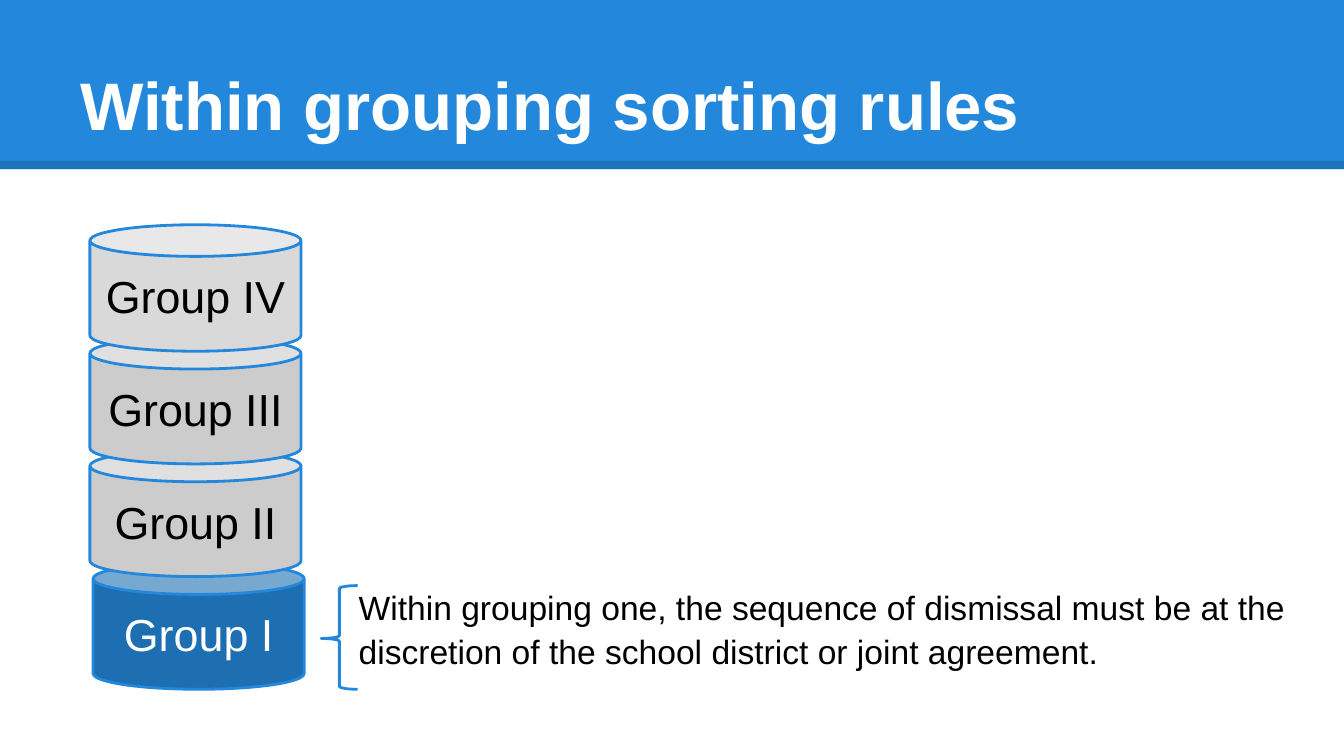
"""Build a slide with a stack of group cylinders and the sorting rule for group one."""
from dataclasses import dataclass

import lxml.etree
import pptx
import pptx.dml.color
import pptx.enum.shapes
import pptx.enum.text
import pptx.oxml
import pptx.oxml.ns
import pptx.util

Cm = pptx.util.Cm
Pt = pptx.util.Pt
RGBColor = pptx.dml.color.RGBColor
Shapes = pptx.enum.shapes.MSO_SHAPE
Anchor = pptx.enum.text.MSO_ANCHOR
Align = pptx.enum.text.PP_ALIGN
qn = pptx.oxml.ns.qn


@dataclass(frozen=True)
class Theme:
    font: str = "Arial"
    accent: RGBColor = RGBColor(0x23, 0x88, 0xDB)
    dark: RGBColor = RGBColor(0x1D, 0x6F, 0xB2)
    grey: RGBColor = RGBColor(0xCC, 0xCC, 0xCC)
    light: RGBColor = RGBColor(0xD9, 0xD9, 0xD9)
    white: RGBColor = RGBColor(0xFF, 0xFF, 0xFF)
    black: RGBColor = RGBColor(0, 0, 0)
    title_size: int = 36
    group_size: int = 24
    body_size: int = 18
    outline: float = 1.5
    rule_width: float = 4.5
    inset: float = 0.25


@dataclass(frozen=True)
class Group:
    label: str
    fill: RGBColor
    color: RGBColor
    left: float = 1.7


THEME = Theme()
SLIDE_WIDTH, SLIDE_HEIGHT = 25.4, 14.29
CAN_WIDTH, CAN_HEIGHT = 3.99, 2.39
CAN_BOTTOM_TOP, CAN_PITCH = 10.64, 2.13
GROUPS = [
    Group("Group I", THEME.dark, THEME.white, 1.76),
    Group("Group II", THEME.grey, THEME.black),
    Group("Group III", THEME.grey, THEME.black),
    Group("Group IV", THEME.light, THEME.black),
]


def place(shape, left: float, top: float, width: float, height: float) -> None:
    shape.left, shape.top = Cm(left), Cm(top)
    shape.width, shape.height = Cm(width), Cm(height)


def write_text(shape, text: str, size: int, color: RGBColor, anchor, align,
               bold: bool = False, spacing: float = 1.0) -> None:
    frame = shape.text_frame
    frame.word_wrap = True
    frame.auto_size = pptx.enum.text.MSO_AUTO_SIZE.NONE
    frame.vertical_anchor = anchor
    frame.margin_left = frame.margin_right = Cm(THEME.inset)
    frame.margin_top = frame.margin_bottom = Cm(THEME.inset)
    frame.text = text
    paragraph = frame.paragraphs[0]
    paragraph.alignment = align
    paragraph.line_spacing = spacing
    paragraph.font.name = THEME.font
    paragraph.font.size = Pt(size)
    paragraph.font.bold = bold
    paragraph.font.color.rgb = color


def add_outlined(slide, kind, left: float, top: float, width: float, height: float):
    shape = slide.shapes.add_shape(kind, Cm(left), Cm(top), Cm(width), Cm(height))
    shape.shadow.inherit = False
    shape.line.color.rgb = THEME.accent
    shape.line.width = Pt(THEME.outline)
    return shape


def add_header(slide, text: str) -> None:
    band = slide.shapes.add_shape(Shapes.RECTANGLE, 0, 0, Cm(SLIDE_WIDTH), Cm(3.2))
    band.shadow.inherit = False
    band.fill.solid()
    band.fill.fore_color.rgb = THEME.accent
    band.line.fill.background()

    rule = slide.shapes.add_connector(
        pptx.enum.shapes.MSO_CONNECTOR.STRAIGHT, 0, Cm(3.12), Cm(SLIDE_WIDTH), Cm(3.12))
    rule.line.color.rgb = THEME.black
    rule.line.width = Pt(THEME.rule_width)
    properties = rule._element.spPr
    lxml.etree.SubElement(properties, qn("a:effectLst"))
    color = properties.find(".//" + qn("a:srgbClr"))
    lxml.etree.SubElement(color, qn("a:alpha")).set("val", "15000")

    title = slide.shapes.title
    place(title, 1.27, 0.58, 22.86, 2.39)
    write_text(title, text, THEME.title_size, THEME.white, Anchor.BOTTOM, Align.LEFT, bold=True)
    slide.shapes._spTree.append(title._element)


def add_group(slide, group: Group, top: float) -> None:
    can = add_outlined(slide, Shapes.CAN, group.left, top, CAN_WIDTH, CAN_HEIGHT)
    can.adjustments[0] = 0.25
    can.fill.solid()
    can.fill.fore_color.rgb = group.fill
    write_text(can, group.label, THEME.group_size, group.color, Anchor.MIDDLE, Align.CENTER)


def add_rule_note(slide, text: str) -> None:
    note = slide.shapes.add_textbox(Cm(6.53), Cm(11.15), Cm(18.21), Cm(1.78))
    write_text(note, text, THEME.body_size, THEME.black, Anchor.BOTTOM, Align.LEFT, spacing=1.07)


def add_brace(slide) -> None:
    brace = add_outlined(slide, Shapes.LEFT_BRACE, 6.07, 11.07, 0.69, 1.96)
    brace.adjustments[0] = 0.08
    brace.adjustments[1] = 0.51
    brace.fill.background()


def main() -> None:
    presentation = pptx.Presentation()
    presentation.slide_width = Cm(SLIDE_WIDTH)
    presentation.slide_height = Cm(SLIDE_HEIGHT)
    slide = presentation.slides.add_slide(presentation.slide_layouts[5])
    add_header(slide, "Within grouping sorting rules")
    add_rule_note(slide, "Within grouping one, the sequence of dismissal must be at the "
                         "discretion of the school district or joint agreement.")
    for level, group in enumerate(GROUPS):
        add_group(slide, group, CAN_BOTTOM_TOP - level * CAN_PITCH)
    add_brace(slide)
    presentation.save("out.pptx")


if __name__ == "__main__":
    main()
